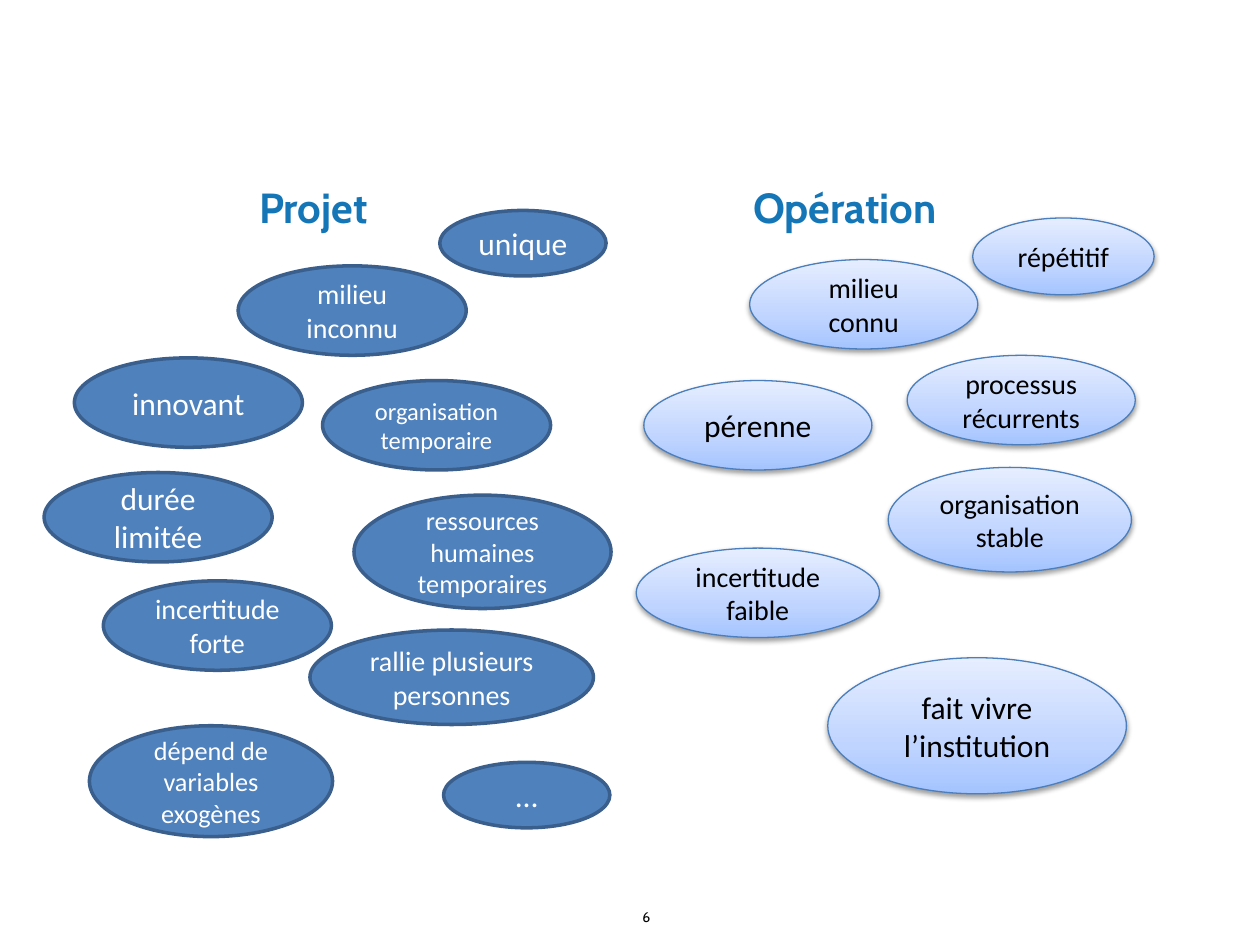
"""Build a slide contrasting the traits of a project and of an operation."""
from lxml import etree
from pptx import Presentation
from pptx import util as u
from pptx.dml.color import RGBColor
from pptx.enum import shapes, text
from pptx.oxml import parse_xml
from pptx.oxml.ns import nsdecls, qn

COLORS = {
    "heading": "1476B7", "black": "000000", "white": "FFFFFF",
    "project": "4F81BD", "project_line": "3A5F8C", "operation_line": "4B7EBC",
    "low": "A4C4FF", "middle": "BFD4FF", "high": "E6EEFF",
}
STOPS = [(0, "low"), (35, "middle"), (100, "high")]
HEADINGS = [("Projet", 1.53), ("Opération", 5.45)]
USUAL = (1.81, 0.71)
SMALL = (1.32, 0.52)
WIDE = (1.93, 0.71)

PROJECT = [
    ("innovant", 0.59, 2.84, USUAL, 18),
    ("organisation temporaire", 2.56, 3.02, USUAL, 14),
    ("milieu inconnu", 1.89, 2.11, USUAL, 16),
    ("incertitude forte", 0.82, 4.61, USUAL, 16),
    ("dépend de variables exogènes", 0.71, 5.76, (1.93, 0.88), 15),
    ("durée limitée", 0.35, 3.75, USUAL, 18),
    ("unique", 3.49, 1.67, SMALL, 18),
    ("ressources humaines temporaires", 2.81, 3.93, (2.04, 0.9), 15),
    ("…", 3.52, 6.05, SMALL, 18),
    ("rallie plusieurs personnes", 2.46, 5, (2.25, 0.75), 16),
]
OPERATION = [
    ("processus récurrents", 7.2, 2.82, USUAL, 16),
    ("organisation stable", 7.05, 3.71, (1.93, 0.83), 16),
    ("pérenne", 5.11, 3.02, USUAL, 18),
    ("incertitude faible", 5.05, 4.35, WIDE, 16),
    ("fait vivre l’institution", 6.57, 5.22, (2.37, 1.08), 18),
    ("répétitif", 7.72, 1.73, (1.44, 0.61), 16),
    ("milieu connu", 5.95, 2.06, USUAL, 16),
]


def rgb(name):
    return RGBColor.from_string(COLORS[name])


def style(para, size, font, color, bold=False):
    for span in para.runs:
        span.font.size = u.Pt(size)
        span.font.name = font
        span.font.bold = bold
        span.font.color.rgb = rgb(color)


def add_label(page, place, words, size, color, bold=False, tabs=()):
    box = page.shapes.add_textbox(*map(u.Inches, place))
    box.text_frame.word_wrap = True
    para = box.text_frame.paragraphs[0]
    if tabs:
        stops = etree.SubElement(para._p.get_or_add_pPr(), qn("a:tabLst"))
        for tab in tabs:
            etree.SubElement(stops, qn("a:tab"), pos=str(u.Inches(tab)), algn="l")
    para.text = words
    style(para, size, "Cabin", color, bold)


def add_bubble(page, trait, line, line_width, color):
    words, left, top, (width, height), size = trait
    bubble = page.shapes.add_shape(
        shapes.MSO_SHAPE.OVAL, *map(u.Inches, (left, top, width, height)))
    bubble.shadow.inherit = False
    bubble.line.color.rgb = rgb(line)
    bubble.line.width = u.Pt(line_width)
    frame = bubble.text_frame
    frame.word_wrap = True
    frame.vertical_anchor = text.MSO_ANCHOR.MIDDLE
    frame.text = words
    para = frame.paragraphs[0]
    para.alignment = text.PP_ALIGN.CENTER
    style(para, size, "Calibri", color)
    return bubble


def add_gradient_and_shadow(bubble):
    stops = "".join(
        f'<a:gs pos="{place * 1000}"><a:srgbClr val="{COLORS[name]}"/></a:gs>'
        for place, name in STOPS)
    gradient = parse_xml(
        f'<a:gradFill {nsdecls("a")} rotWithShape="1"><a:gsLst>{stops}</a:gsLst>'
        '<a:lin ang="16200000" scaled="0"/></a:gradFill>')
    shadow = parse_xml(
        f'<a:outerShdw {nsdecls("a")} blurRad="{u.Pt(3.1)}" dist="{u.Pt(1.6)}" '
        f'dir="5400000" rotWithShape="0"><a:srgbClr val="{COLORS["black"]}">'
        '<a:alpha val="38000"/></a:srgbClr></a:outerShdw>')
    properties = bubble._element.spPr
    properties.find(qn("a:prstGeom")).addnext(gradient)
    properties.find(qn("a:effectLst")).append(shadow)


def main():
    deck = Presentation()
    deck.slide_width, deck.slide_height = u.Inches(10), u.Inches(7.5)
    page = deck.slides.add_slide(deck.slide_layouts[6])
    add_label(page, (5, 7.16, 3.27, 0.24), "6", 8, "black")
    add_label(page, (0.43, 1.39, 8.54, 0.5),
              "".join("\t" + words for words, _ in HEADINGS),
              24, "heading", True, [tab for _, tab in HEADINGS])
    for trait in PROJECT:
        bubble = add_bubble(page, trait, "project_line", 2, "white")
        bubble.fill.solid()
        bubble.fill.fore_color.rgb = rgb("project")
    for trait in OPERATION:
        bubble = add_bubble(page, trait, "operation_line", 0.75, "black")
        add_gradient_and_shadow(bubble)
    deck.save("out.pptx")


if __name__ == "__main__":
    main()
